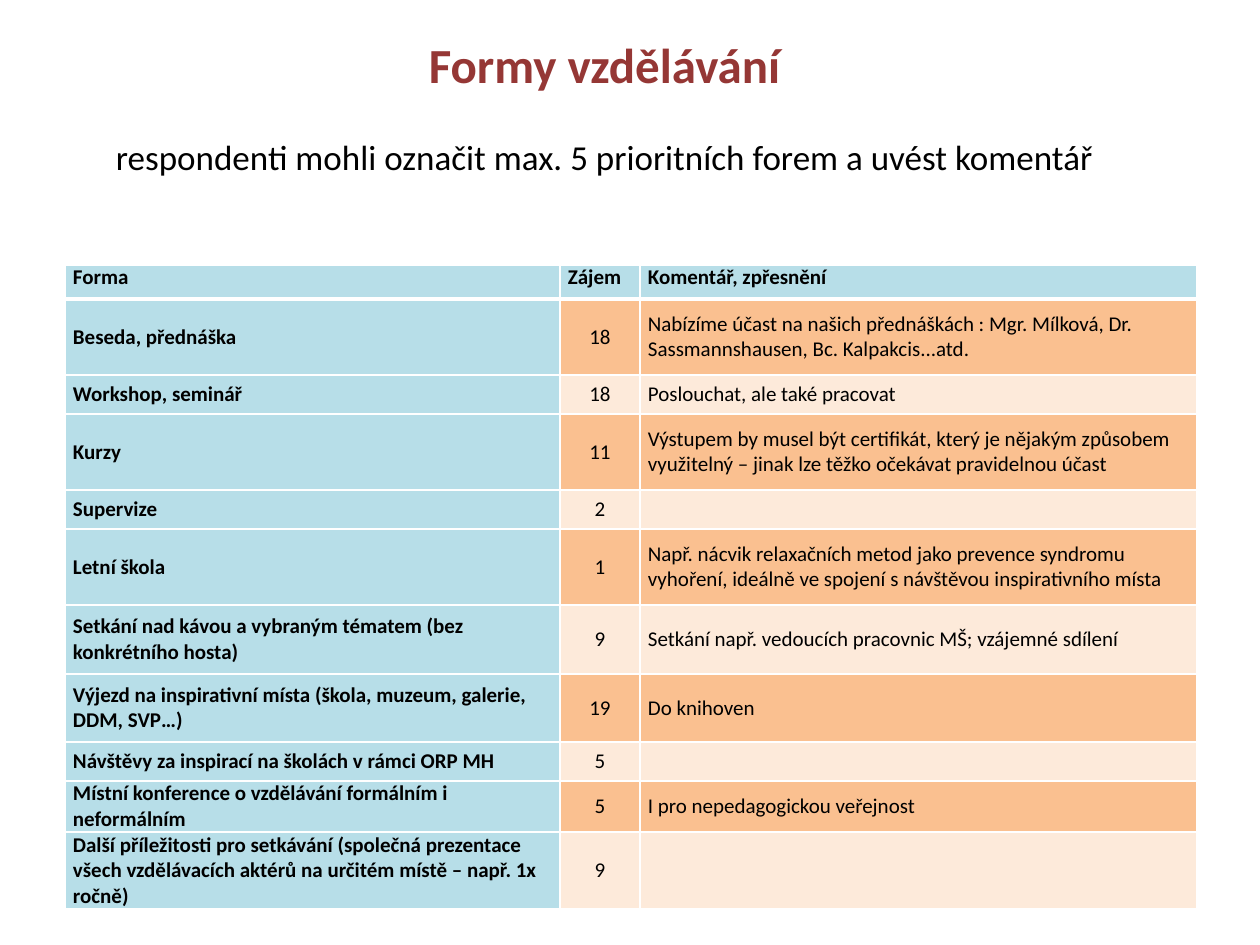
from lxml import etree
from pptx import Presentation
from pptx import util as u
from pptx.dml.color import RGBColor
from pptx.enum import text
from pptx.oxml.ns import qn

PX = 914400 // 126
FONT = "Calibri"
BLACK, WHITE, RED = "000000", "FFFFFF", "953735"
BLUE, ORANGE, PEACH = "B7DEE8", "FAC090", "FDEADA"

COL_WIDTHS = [495, 80, 557]
ROW_HEIGHTS = [34, 76, 39, 76, 39, 76, 69, 68, 39, 50, 77]
ROWS = [
    ("Forma", "Zájem", "Komentář, zpřesnění"),
    ("Beseda, přednáška", "18",
     "Nabízíme účast na našich přednáškách : Mgr. Mílková, Dr. Sassmannshausen, "
     "Bc. Kalpakcis...atd."),
    ("Workshop, seminář", "18", "Poslouchat, ale také pracovat"),
    ("Kurzy", "11",
     "Výstupem by musel být certifikát, který je nějakým způsobem využitelný – "
     "jinak lze těžko očekávat pravidelnou účast"),
    ("Supervize", "2", ""),
    ("Letní škola", "1",
     "Např. nácvik relaxačních metod jako prevence syndromu vyhoření, ideálně "
     "ve spojení s návštěvou inspirativního místa"),
    ("Setkání nad kávou a vybraným tématem (bez konkrétního hosta)", "9",
     "Setkání např. vedoucích pracovnic MŠ; vzájemné sdílení"),
    ("Výjezd na inspirativní místa (škola, muzeum, galerie, DDM, SVP…)", "19",
     "Do knihoven"),
    ("Návštěvy za inspirací na školách v rámci ORP MH", "5", ""),
    ("Místní konference o vzdělávání formálním i neformálním", "5",
     "I pro nepedagogickou veřejnost"),
    ("Další příležitosti pro setkávání (společná prezentace všech vzdělávacích "
     "aktérů na určitém místě – např. 1x ročně)", "9", ""),
]


def px(n):
    return u.Emu(n * PX)


def rgb(value):
    return RGBColor.from_string(value)


def write(tf, content, size, color=BLACK, bold=False, align=text.PP_ALIGN.LEFT):
    tf.text = content
    p = tf.paragraphs[0]
    p.alignment = align
    for r in p.runs:
        r.font.name = FONT
        r.font.size = u.Pt(size)
        r.font.bold = bold
        r.font.color.rgb = rgb(color)


def heading(shape, top, content, size, color, bold):
    """Place a centred line of text across the slide's heading area."""
    shape.left, shape.top, shape.width, shape.height = map(px, (44, top, 1121, 72))
    tf = shape.text_frame
    tf.word_wrap = True
    tf.auto_size = text.MSO_AUTO_SIZE.NONE
    tf.vertical_anchor = text.MSO_ANCHOR.MIDDLE
    write(tf, content, size, color, bold, text.PP_ALIGN.CENTER)


def set_borders(cell, top, bottom):
    """Draw white borders; top and bottom are widths in points."""
    tc_pr = cell._tc.get_or_add_tcPr()
    widths = {"a:lnL": 1, "a:lnR": 1, "a:lnT": top, "a:lnB": bottom}
    for i, (tag, width) in enumerate(widths.items()):
        ln = etree.Element(qn(tag), w=str(u.Pt(width)))
        fill = etree.SubElement(ln, qn("a:solidFill"))
        etree.SubElement(fill, qn("a:srgbClr"), val=WHITE)
        tc_pr.insert(i, ln)


def format_cell(cell, row, col, content):
    header, label = row == 0, col == 0
    cell.margin_left = cell.margin_right = px(8)
    cell.margin_top = cell.margin_bottom = 0
    cell.vertical_anchor = text.MSO_ANCHOR.TOP if header else text.MSO_ANCHOR.MIDDLE
    centred = col == 1 and not header
    align = text.PP_ALIGN.CENTER if centred else text.PP_ALIGN.LEFT
    write(cell.text_frame, content, 12, bold=header or label, align=align)
    if header or label:
        cell.text_frame.paragraphs[0].space_after = u.Pt(10)
    cell.fill.solid()
    band = ORANGE if row % 2 else PEACH
    cell.fill.fore_color.rgb = rgb(BLUE if header or label else band)
    set_borders(cell, top=3 if row == 1 else 1, bottom=3 if header else 1)


def add_forms_table(s):
    frame = s.shapes.add_table(len(ROWS), len(COL_WIDTHS), px(65), px(265),
                               px(sum(COL_WIDTHS)), px(sum(ROW_HEIGHTS)))
    table = frame.table
    for column, width in zip(table.columns, COL_WIDTHS):
        column.width = px(width)
    for i, (height, contents) in enumerate(zip(ROW_HEIGHTS, ROWS)):
        table.rows[i].height = px(height)
        for j, content in enumerate(contents):
            format_cell(table.cell(i, j), i, j, content)


def main():
    prs = Presentation()
    prs.slide_width, prs.slide_height = px(1260), px(945)
    s = prs.slides.add_slide(prs.slide_layouts[5])
    heading(s.shapes.title, 28, "Formy vzdělávání", 28, RED, True)
    heading(s.shapes.add_textbox(0, 0, 0, 0), 120,
            "respondenti mohli označit max. 5 prioritních forem a uvést komentář",
            20, BLACK, False)
    add_forms_table(s)
    prs.save("out.pptx")


if __name__ == "__main__":
    main()
